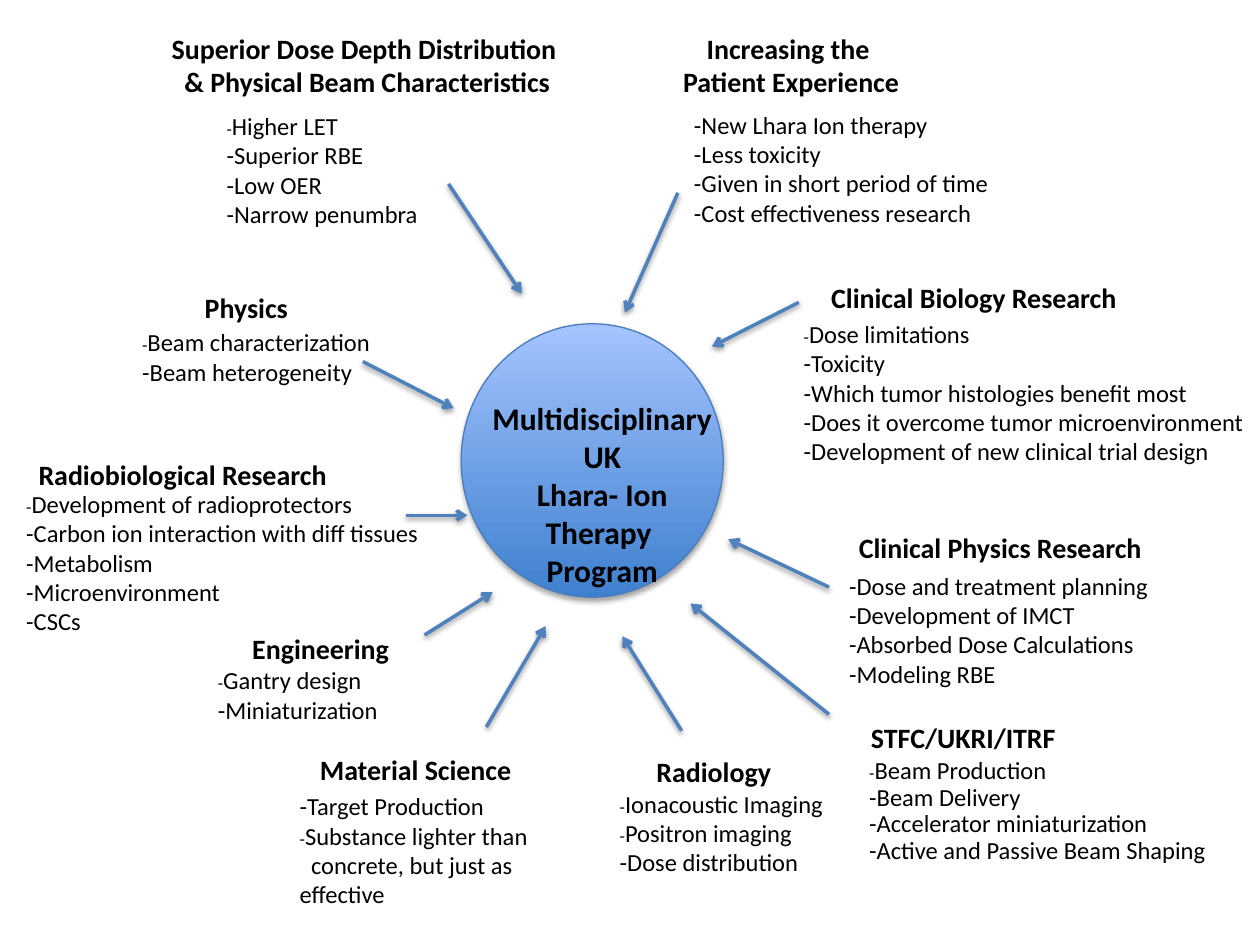
from dataclasses import dataclass

from lxml import etree
from pptx import Presentation
from pptx.dml.color import RGBColor
from pptx.enum.shapes import MSO_CONNECTOR, MSO_SHAPE
from pptx.enum.text import MSO_AUTO_SIZE, PP_ALIGN
from pptx.oxml.ns import qn
from pptx.util import Inches, Pt

OVAL = MSO_SHAPE.OVAL
STRAIGHT = MSO_CONNECTOR.STRAIGHT
GROW = MSO_AUTO_SIZE.SHAPE_TO_FIT_TEXT
LEFT, CENTER = PP_ALIGN.LEFT, PP_ALIGN.CENTER
BLANK_LAYOUT = 6


@dataclass(frozen=True)
class Theme:
    font: str = "Calibri"
    text: str = "000000"
    arrow: str = "4F81BD"
    hub_line: str = "4B7EBC"
    hub_bottom: str = "3F80CE"
    hub_top: str = "A4C4FF"
    hub_size: int = 18
    heading_size: int = 16
    item_size: int = 14
    dash_size: int = 10


@dataclass(frozen=True)
class Topic:
    heading: tuple
    heading_at: tuple
    items: tuple
    items_at: tuple
    small_dashes: tuple = ()  # positions of items with a smaller dash
    heading_align: int = CENTER
    heading_spacing: float = 1.0
    item_spacing: float = 1.0
    wrap: bool = False
    continuation: str = ""  # indented line that follows the items


THEME = Theme()

TOPICS = (
    Topic(("Superior Dose Depth Distribution ", "& Physical Beam Characteristics"),
          (1.02, 0.2, 3.79, 0.86),
          ("Higher LET", "Superior RBE", "Low OER", "Narrow penumbra"),
          (1.7, 0.83, 1.73, 1.04), small_dashes=(0,)),
    Topic(("Increasing the ", "Patient Experience"), (5.16, 0.2, 2.24, 0.86),
          ("New Lhara Ion therapy", "Less toxicity",
           "Given in short period of time", "Cost effectiveness research"),
          (5.41, 0.82, 2.56, 1.21)),
    Topic(("Clinical Biology Research",), (6.48, 2.18, 2.5, 0.37),
          ("Dose limitations", "Toxicity", "Which tumor histologies benefit most",
           "Does it overcome tumor microenvironment",
           "Development of new clinical trial design"),
          (6.28, 2.48, 3.72, 1.28), small_dashes=(0,)),
    Topic(("Clinical Physics Research",), (6.51, 4.16, 2.86, 0.5),
          ("Dose and treatment planning", "Development of IMCT",
           "Absorbed Dose Calculations", "Modeling RBE"),
          (6.64, 4.48, 2.64, 1.04)),
    Topic(("STFC/UKRI/ITRF",), (6.8, 5.67, 1.69, 0.37),
          ("Beam Production", "Beam Delivery", "Accelerator miniaturization",
           "Active and Passive Beam Shaping"),
          (6.8, 5.97, 2.9, 0.95), small_dashes=(0,), item_spacing=0.9),
    Topic(("Radiology",), (5.02, 5.94, 1.29, 0.86),
          ("Ionacoustic Imaging", "Positron imaging", "Dose distribution"),
          (4.82, 6.21, 1.86, 0.81), small_dashes=(0, 1)),
    Topic(("Material Science",), (2.44, 5.92, 2.01, 0.5),
          ("Target Production", "Substance lighter than"),
          (2.28, 6.23, 2.45, 1.04), small_dashes=(1,), heading_align=LEFT,
          wrap=True, continuation="concrete, but just as effective"),
    Topic(("Engineering",), (1.79, 4.96, 1.51, 0.5),
          ("Gantry design", "Miniaturization"),
          (1.63, 5.23, 1.49, 0.57), small_dashes=(0,)),
    Topic(("Radiobiological Research",), (0, 3.63, 2.9, 0.44),
          ("Development of radioprotectors",
           "Carbon ion interaction with diff tissues",
           "Metabolism", "Microenvironment", "CSCs"),
          (0.11, 3.83, 3.35, 1.28), small_dashes=(0,), heading_spacing=0.8),
    Topic(("Physics",), (1.45, 2.26, 1.01, 0.5),
          ("Beam characterization", "Beam heterogeneity"),
          (1.03, 2.55, 2.03, 0.57), small_dashes=(0,)),
)

# Each arrow runs from its topic towards the hub: x1, y1, x2, y2
ARROWS = (
    (3.56, 1.46, 4.14, 2.33), (5.38, 1.53, 4.96, 2.48),
    (6.34, 2.4, 5.65, 2.75), (6.58, 4.66, 5.78, 4.28),
    (6.58, 5.67, 5.48, 4.79), (5.41, 5.8, 4.94, 5.05),
    (3.86, 5.77, 4.33, 4.97), (3.37, 5.04, 3.91, 4.7),
    (3.22, 4.09, 3.71, 4.09), (2.88, 2.87, 3.6, 3.24),
)


def inches(values):
    return [Inches(value) for value in values]


def add_shadow(shape, distance, opacity):
    """Give the shape a soft shadow straight below it."""
    properties = shape._element.spPr
    effects = properties.find(qn("a:effectLst"))
    if effects is None:
        effects = etree.SubElement(properties, qn("a:effectLst"))
    shadow = etree.SubElement(
        effects, qn("a:outerShdw"), blurRad=str(Pt(3.1)), dist=str(Pt(distance)),
        dir="5400000", rotWithShape="0")
    color = etree.SubElement(shadow, qn("a:srgbClr"), val="000000")
    etree.SubElement(color, qn("a:alpha"), val=str(opacity * 1000))


def add_hub(page):
    hub = page.shapes.add_shape(OVAL, *inches((3.66, 2.57, 2.08, 2.17)))
    hub.fill.gradient()
    hub.fill.gradient_angle = 90
    for stop, color in zip(hub.fill.gradient_stops, (THEME.hub_bottom, THEME.hub_top)):
        stop.color.rgb = RGBColor.from_string(color)
    hub.line.color.rgb = RGBColor.from_string(THEME.hub_line)
    hub.line.width = Pt(0.75)
    hub.shadow.inherit = False
    add_shadow(hub, distance=1.8, opacity=35)


def add_arrow(page, ends):
    arrow = page.shapes.add_connector(STRAIGHT, *inches(ends))
    arrow.line.color.rgb = RGBColor.from_string(THEME.arrow)
    arrow.line.width = Pt(2)
    outline = arrow._element.spPr.find(qn("a:ln"))
    etree.SubElement(outline, qn("a:tailEnd"), type="arrow")
    add_shadow(arrow, distance=1.6, opacity=38)


def add_span(para, text, size, bold=False):
    span = para.add_run()
    span.text = text
    span.font.name = THEME.font
    span.font.size = Pt(size)
    span.font.bold = bold
    span.font.color.rgb = RGBColor.from_string(THEME.text)


def add_text(page, at, paragraphs, align=LEFT, spacing=1.0, wrap=False, bold=False):
    """Add a text box; each paragraph is a list of (text, size) spans."""
    box = page.shapes.add_textbox(*inches(at))
    frame = box.text_frame
    frame.word_wrap = wrap
    frame.auto_size = GROW
    for index, spans in enumerate(paragraphs):
        para = frame.add_paragraph() if index else frame.paragraphs[0]
        para.alignment = align
        if spacing != 1.0:
            para.line_spacing = spacing
        for text, size in spans:
            for part, line in enumerate(text.split("\n")):
                if part:
                    para.add_line_break()
                add_span(para, line, size, bold)
    return frame


def add_topic(page, topic):
    heading = [[(line, THEME.heading_size)] for line in topic.heading]
    add_text(page, topic.heading_at, heading, align=topic.heading_align,
             spacing=topic.heading_spacing, bold=True)
    items = []
    for index, item in enumerate(topic.items):
        if index in topic.small_dashes:
            items.append([("-", THEME.dash_size), (item, THEME.item_size)])
        else:
            items.append([("-" + item, THEME.item_size)])
    if topic.continuation:
        items.append([(topic.continuation, THEME.item_size)])
    frame = add_text(page, topic.items_at, items, spacing=topic.item_spacing,
                     wrap=topic.wrap)
    if topic.continuation:
        frame.paragraphs[-1]._p.get_or_add_pPr().set("indent", str(Inches(0.09)))


def main():
    deck = Presentation()
    deck.slide_width, deck.slide_height = Inches(10), Inches(7.5)
    page = deck.slides.add_slide(deck.slide_layouts[BLANK_LAYOUT])

    # Hub with its arrows
    add_hub(page)
    for ends in ARROWS:
        add_arrow(page, ends)
    hub_lines = ("Multidisciplinary", "UK\nLhara- Ion", "Therapy ", "Program")
    add_text(page, (3.8, 3.12, 1.96, 1.62),
             [[(line, THEME.hub_size)] for line in hub_lines], align=CENTER, bold=True)

    # Topics around the hub
    for topic in TOPICS:
        add_topic(page, topic)

    deck.save("out.pptx")


if __name__ == "__main__":
    main()
